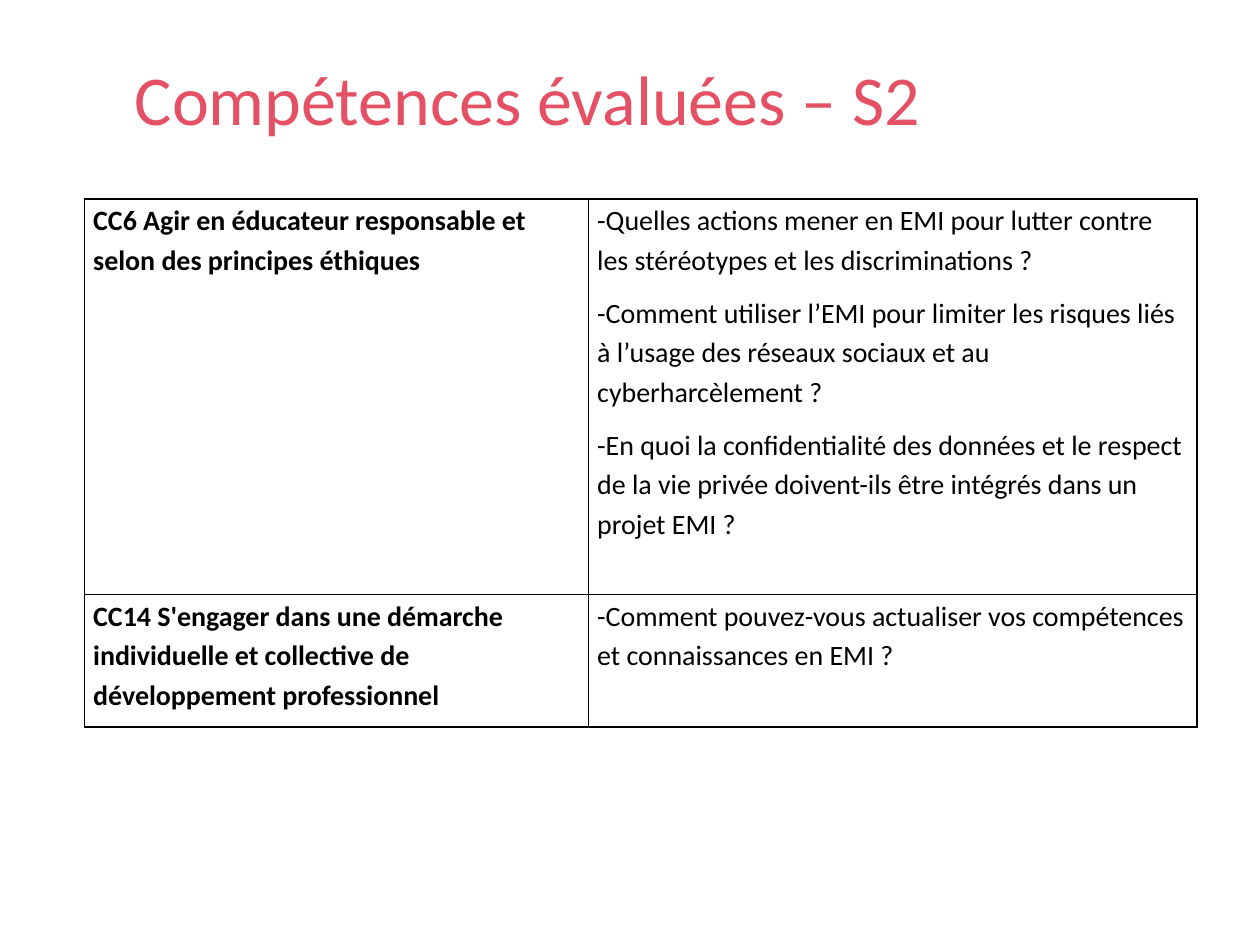
"""Build the slide listing the competences assessed in semester 2."""
from lxml.etree import SubElement
from pptx import Presentation
from pptx.dml.color import RGBColor as RGB
from pptx.oxml.ns import qn
from pptx.util import Inches, Pt

TITLE = "Compétences évaluées – S2"
ROWS = [
    (["CC6 Agir en éducateur responsable et selon des principes éthiques"],
     ["-Quelles actions mener en EMI pour lutter contre les stéréotypes et les discriminations ?",
      "-Comment utiliser l’EMI pour limiter les risques liés à l’usage des réseaux sociaux "
      "et au cyberharcèlement ?",
      "-En quoi la confidentialité des données et le respect de la vie privée doivent-ils être "
      "intégrés dans un projet EMI ?"]),
    (["CC14 S'engager dans une démarche individuelle et collective de développement professionnel"],
     ["-Comment pouvez-vous actualiser vos compétences et connaissances en EMI ?"]),
]
COL_WIDTHS = (4, 4.83)
ROW_HEIGHTS = (3.14, 1.05)
FONT = "Calibri"
CORAL = RGB(0xE4, 0x51, 0x64)
BLACK = RGB(0, 0, 0)
WHITE = RGB(255, 255, 255)


def write(tf, paragraphs, size, color, bold=False, spacing=None, after=None, margin=0):
    tf.word_wrap = True
    tf.margin_left = tf.margin_right = Inches(margin)
    tf.margin_top = tf.margin_bottom = 0
    for i, text in enumerate(paragraphs):
        p = tf.add_paragraph() if i else tf.paragraphs[0]
        p.line_spacing, p.space_after = spacing, after
        r = p.add_run()
        r.text = text
        r.font.name, r.font.size, r.font.bold = FONT, Pt(size), bold
        r.font.color.rgb = color


def style_cell(cell):
    cell.margin_left = cell.margin_right = Inches(0.07)
    cell.margin_top = cell.margin_bottom = 0
    props = cell._tc.get_or_add_tcPr()
    for side in ("a:lnL", "a:lnR", "a:lnT", "a:lnB"):
        line = SubElement(props, qn(side), w=str(Pt(1)))
        SubElement(SubElement(line, qn("a:solidFill")), qn("a:srgbClr"), val=str(BLACK))
    cell.fill.solid()
    cell.fill.fore_color.rgb = WHITE


def main():
    prs = Presentation()
    prs.slide_width, prs.slide_height = Inches(10), Inches(7.5)
    slide = prs.slides.add_slide(prs.slide_layouts[6])

    title = slide.shapes.add_textbox(Inches(1.07), Inches(0.44), Inches(6.76), Inches(0.69))
    write(title.text_frame, [TITLE], 40, CORAL)

    table = slide.shapes.add_table(
        len(ROWS), len(COL_WIDTHS), Inches(0.67), Inches(1.58),
        Inches(sum(COL_WIDTHS)), Inches(sum(ROW_HEIGHTS))).table
    table.first_row = table.horz_banding = False
    for column, width in zip(table.columns, COL_WIDTHS):
        column.width = Inches(width)
    for i, (row, height) in enumerate(zip(ROWS, ROW_HEIGHTS)):
        table.rows[i].height = Inches(height)
        for j, paragraphs in enumerate(row):
            cell = table.cell(i, j)
            write(cell.text_frame, paragraphs, 16, BLACK, bold=j == 0, spacing=1.15, after=Pt(8))
            style_cell(cell)
    prs.save("out.pptx")


if __name__ == "__main__":
    main()
